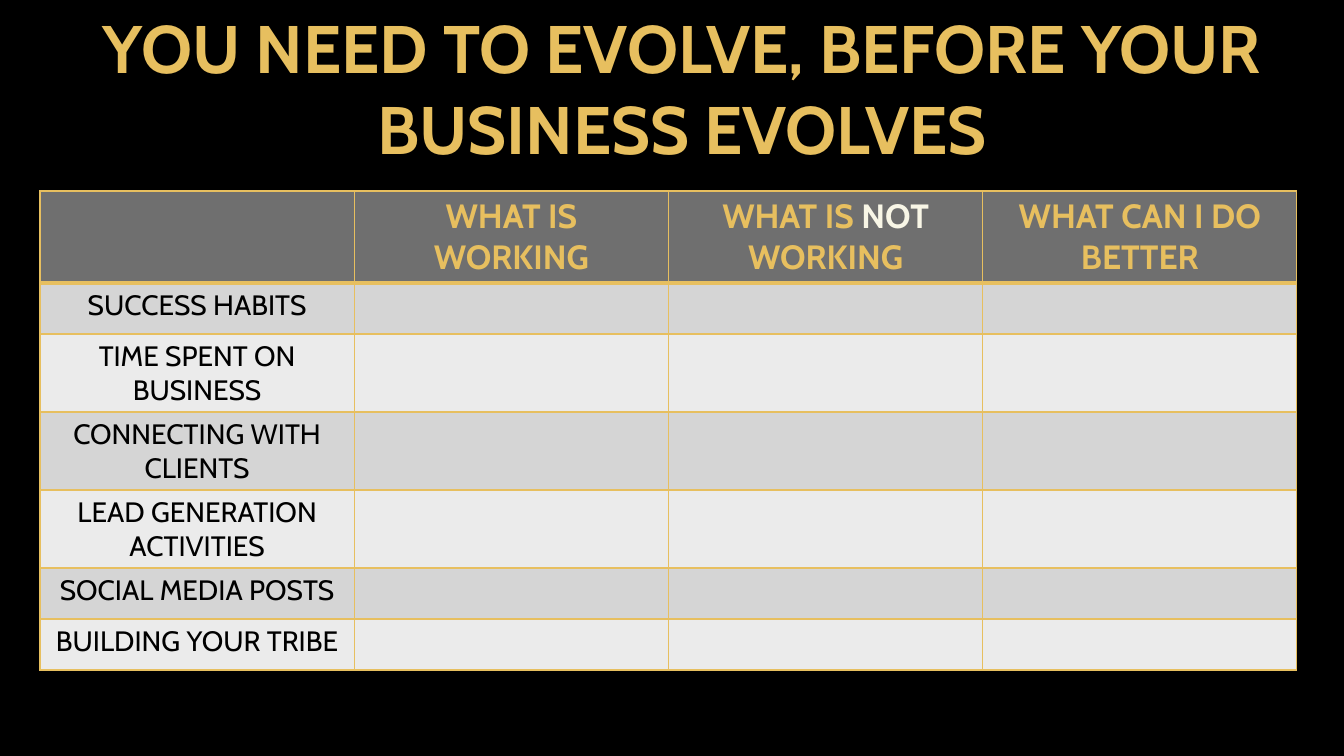
from pptx import Presentation
from pptx.dml.color import RGBColor
from pptx.enum.text import MSO_ANCHOR, PP_ALIGN
from pptx.oxml import parse_xml
from pptx.oxml.ns import nsdecls
from pptx.util import Pt

PX = 12192000 / 1344
FONT = "Cabin"
COLORS = {
    "background": "000000",
    "gold": "E7BF5F",
    "cream": "F8F6E6",
    "header": "6F6F6F",
    "dark band": "D5D5D5",
    "light band": "EBEBEB",
    "label": "000000",
}
HEADINGS = [
    [],
    [("WHAT IS WORKING", "gold")],
    [("WHAT IS ", "gold"), ("NOT", "cream"), (" WORKING", "gold")],
    [("WHAT CAN I DO BETTER", "gold")],
]
# Each label with its row height
TOPICS = [
    ("SUCCESS HABITS", 51),
    ("TIME SPENT ON BUSINESS", 78),
    ("CONNECTING WITH CLIENTS", 78),
    ("LEAD GENERATION ACTIVITIES", 78),
    ("SOCIAL MEDIA POSTS", 51),
    ("BUILDING YOUR TRIBE", 51),
]
HEADER_HEIGHT = 92


def px(length):
    return round(length * PX)


def color(name):
    return RGBColor.from_string(COLORS[name])


def write(para, spans, size, bold):
    para.alignment = PP_ALIGN.CENTER
    para.font.name, para.font.size, para.font.bold = FONT, Pt(size), bold
    for text, tint in spans:
        span = para.add_run()
        span.text = text
        span.font.color.rgb = color(tint)


def style_cell(cell, fill, top, bottom):
    # Borders come before the fill in the cell properties
    props = cell._tc.get_or_add_tcPr()
    for side, width in (("L", 1), ("R", 1), ("T", top), ("B", bottom)):
        props.append(parse_xml(
            f'<a:ln{side} {nsdecls("a")} w="{Pt(width)}"><a:solidFill>'
            f'<a:srgbClr val="{COLORS["gold"]}"/></a:solidFill></a:ln{side}>'))
    cell.fill.solid()
    cell.fill.fore_color.rgb = color(fill)


def add_title(page, left, top, width, height):
    box = page.shapes.add_textbox(px(left), px(top), px(width), px(height))
    frame = box.text_frame
    frame.word_wrap = True
    frame.vertical_anchor = MSO_ANCHOR.BOTTOM
    title = "YOU NEED TO EVOLVE, BEFORE YOUR BUSINESS EVOLVES"
    write(frame.paragraphs[0], [(title, "gold")], 48, True)


def add_review_table(page, left, top, width):
    heights = [HEADER_HEIGHT] + [height for _, height in TOPICS]
    table = page.shapes.add_table(
        len(heights), len(HEADINGS),
        px(left), px(top), px(width), px(sum(heights))).table
    for row, height in zip(table.rows, heights):
        row.height = px(height)

    # Header row, closed by a thick rule
    for cell, spans in zip(table.rows[0].cells, HEADINGS):
        style_cell(cell, "header", 1, 3)
        write(cell.text_frame.paragraphs[0], spans, 24, True)

    # Banded topic rows
    for number, (topic, _) in enumerate(TOPICS, start=1):
        band = "dark band" if number % 2 else "light band"
        for cell in table.rows[number].cells:
            style_cell(cell, band, 3 if number == 1 else 1, 1)
        label = table.cell(number, 0).text_frame.paragraphs[0]
        write(label, [(topic, "label")], 20, False)


def main():
    deck = Presentation()
    deck.slide_width, deck.slide_height = px(1344), px(756)
    page = deck.slides.add_slide(deck.slide_layouts[6])
    page.background.fill.solid()
    page.background.fill.fore_color.rgb = color("background")
    add_title(page, -11, -20, 1386, 193)
    add_review_table(page, 40, 191, 1257)
    deck.save("out.pptx")


if __name__ == "__main__":
    main()
